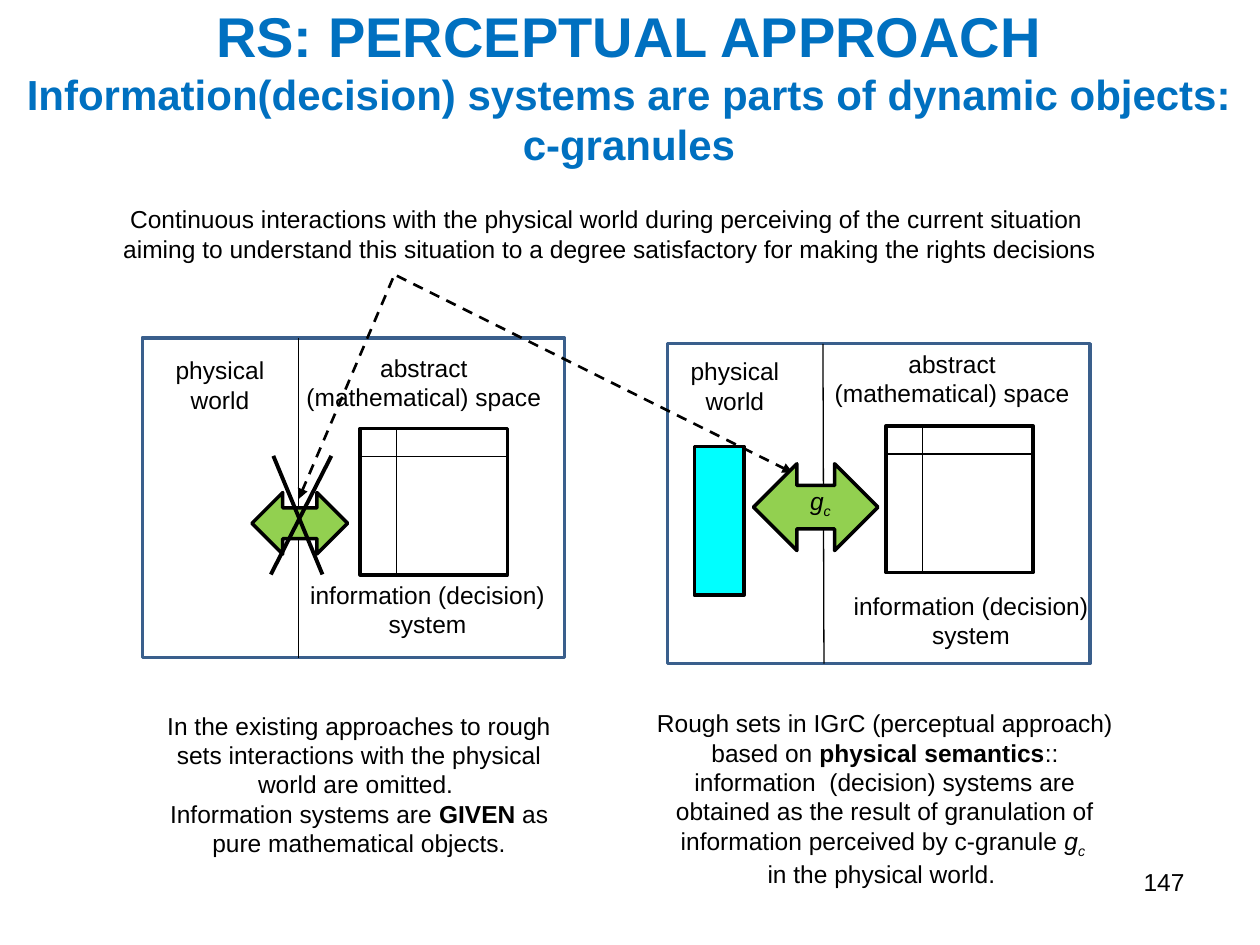
import pptx
import pptx.util
import pptx.dml.color
import pptx.enum.dml
import pptx.enum.shapes
import pptx.enum.text
import lxml.etree

Cm = pptx.util.Cm
Pt = pptx.util.Pt
MSO = pptx.enum.shapes.MSO_SHAPE
ALIGN = pptx.enum.text.PP_ALIGN
rgb = pptx.dml.color.RGBColor.from_string

prs = pptx.Presentation()
prs.slide_width, prs.slide_height = Cm(25.4), Cm(19.05)
shapes = prs.slides.add_slide(prs.slide_layouts[6]).shapes


def add_text(paragraphs, box, size=14, color="000000", align=ALIGN.CENTER, bold=False,
             anchor=pptx.enum.text.MSO_ANCHOR.TOP):
    tf = shapes.add_textbox(*map(Cm, box)).text_frame
    tf.word_wrap = True
    tf.vertical_anchor = anchor
    for i, runs in enumerate(paragraphs):
        p = tf.paragraphs[0] if i == 0 else tf.add_paragraph()
        p.alignment = align
        for text, style in runs:
            r = p.add_run()
            r.text = text
            r.font.name = "Arial"
            r.font.size = Pt(size)
            r.font.color.rgb = rgb(color)
            r.font.bold = bold or style == "bold"
            r.font.italic = style in ("italic", "subscript")
            if style == "subscript":
                r.font._element.set("baseline", "-25000")
    return tf


def add_line(x1, y1, x2, y2, width, arrow=False):
    s = shapes.add_connector(pptx.enum.shapes.MSO_CONNECTOR.STRAIGHT, *map(Cm, (x1, y1, x2, y2)))
    s.line.color.rgb = rgb("000000")
    s.line.width = Pt(width)
    ns = "{http://schemas.openxmlformats.org/drawingml/2006/main}"
    if arrow:
        s.line.dash_style = pptx.enum.dml.MSO_LINE.DASH
        lxml.etree.SubElement(s.line._get_or_add_ln(), ns + "tailEnd", type="triangle")
    lxml.etree.SubElement(s._element.spPr, ns + "effectLst")


styled = []
panels = [
    (2.87, 6.81, 7.26, 8.64, 6.02, 6.02),
    (13.46, 6.93, 17.86, 8.59, 16.59, 16.61),
]
for x, y, table_x, table_y, top_x, bottom_x in panels:
    s = shapes.add_shape(MSO.RECTANGLE, Cm(x), Cm(y), Cm(8.51), Cm(6.45))
    styled.append((s, "FFFFFF", "3A5F8C"))
    s = shapes.add_shape(MSO.RECTANGLE, Cm(table_x), Cm(table_y), Cm(2.97), Cm(2.95))
    styled.append((s, "FFFFFF", "000000"))
    add_line(table_x, table_y + 0.56, table_x + 2.97, table_y + 0.56, 0.75)
    add_line(table_x + 0.74, table_y, table_x + 0.74, table_y + 2.95, 0.75)
    add_line(top_x, y, bottom_x, y + 6.45, 0.75)

add_line(7.92, 5.61, 6.02, 10.06, 1.5, arrow=True)
add_line(8, 5.56, 15.98, 9.53, 1.5, arrow=True)

for box in [(5.08, 9.93, 1.93, 1.24), (15.19, 9.35, 2.51, 1.75)]:
    s = shapes.add_shape(MSO.LEFT_RIGHT_ARROW, *map(Cm, box))
    styled.append((s, "92D050", "000000"))

add_line(6.68, 9.19, 5.46, 11.58, 2.25)
add_line(5.51, 9.19, 6.5, 11.58, 2.25)

granule = [
    (13.79, 9.14), (14.15, 9.17), (14.38, 9.27), (14.66, 9.37), (14.83, 9.45),
    (15.06, 9.55), (15.11, 9.7), (15.19, 9.96), (15.16, 11.28), (15.11, 11.48),
    (14.86, 11.56), (14.22, 11.51), (14.1, 11.4), (14.02, 11.13), (13.89, 10.87),
    (13.79, 10.34), (13.74, 10.24), (13.69, 9.75), (13.67, 9.45), (13.79, 9.22),
]
builder = shapes.build_freeform(*granule[0], scale=Cm(1))
builder.add_line_segments(granule[1:], close=True)
styled.append((builder.convert_to_shape(), "00FFFF", "000000"))

for s, fill, edge in styled:
    s.shadow.inherit = False
    s.fill.solid()
    s.fill.fore_color.rgb = rgb(fill)
    s.line.color.rgb = rgb(edge)
    s.line.width = Pt(2)

labels = [
    ("physical world", (3.23, 7.04, 2.41, 1.45)),
    ("physical world", (13.61, 7.06, 2.41, 1.45)),
    ("abstract (mathematical) space", (5.89, 6.99, 5.31, 1.45)),
    ("abstract (mathematical) space", (16.54, 6.91, 5.31, 1.45)),
    ("information (decision) system", (5.56, 11.56, 6.12, 1.45)),
    ("information (decision) system", (16.59, 11.79, 5.97, 1.45)),
]
for text, box in labels:
    add_text([[(text, "")]], box)

add_text([[("g", "italic"), ("c", "subscript")]], (16.08, 9.68, 0.99, 0.86), align=ALIGN.LEFT)
add_text([
    [("Continuous interactions with the physical world during perceiving of the current situation ", "")],
    [("aiming to understand this situation to a degree satisfactory for making the rights decisions", "")],
], (1.9, 3.99, 20.8, 1.45))
add_text([
    [("In the existing approaches to rough sets interactions with the physical world are omitted. ", "")],
    [("Information systems are ", ""), ("GIVEN", "bold"), (" as", "")],
    [("pure mathematical objects.", "")],
], (2.77, 14.2, 8.94, 3.25))
add_text([
    [("Rough sets in IGrC (perceptual approach) based on ", ""), ("physical semantics", "bold"), ("::", "")],
    [("information  (decision) systems are obtained as the result of granulation of "
      "information perceived by c-granule ", ""), ("g", "italic"), ("c ", "subscript")],
    [("in the physical world. ", "")],
], (12.95, 14.15, 9.78, 3.84))

tf = add_text([
    [("RS: PERCEPTUAL APPROACH", "")],
    [("Information(decision) systems are parts of dynamic objects: c-granules", "")],
], (0.13, 0, 25.1, 3.43), size=24, color="0070C0", bold=True,
    anchor=pptx.enum.text.MSO_ANCHOR.MIDDLE)
tf.paragraphs[0].runs[0].font.size = Pt(32)
add_text([[("147", "")]], (18.21, 17.35, 5.92, 1.32), align=ALIGN.RIGHT)

prs.save("out.pptx")
